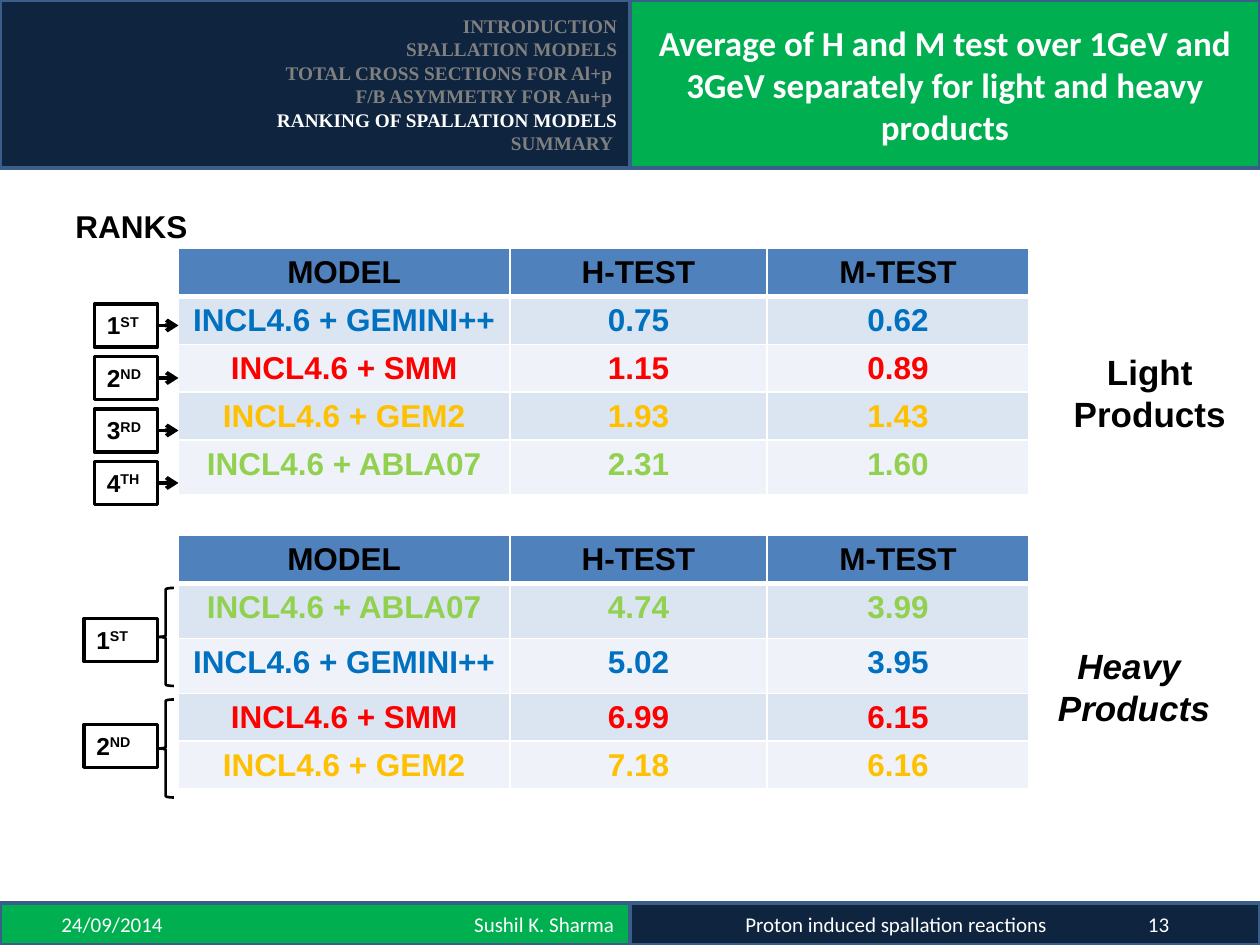
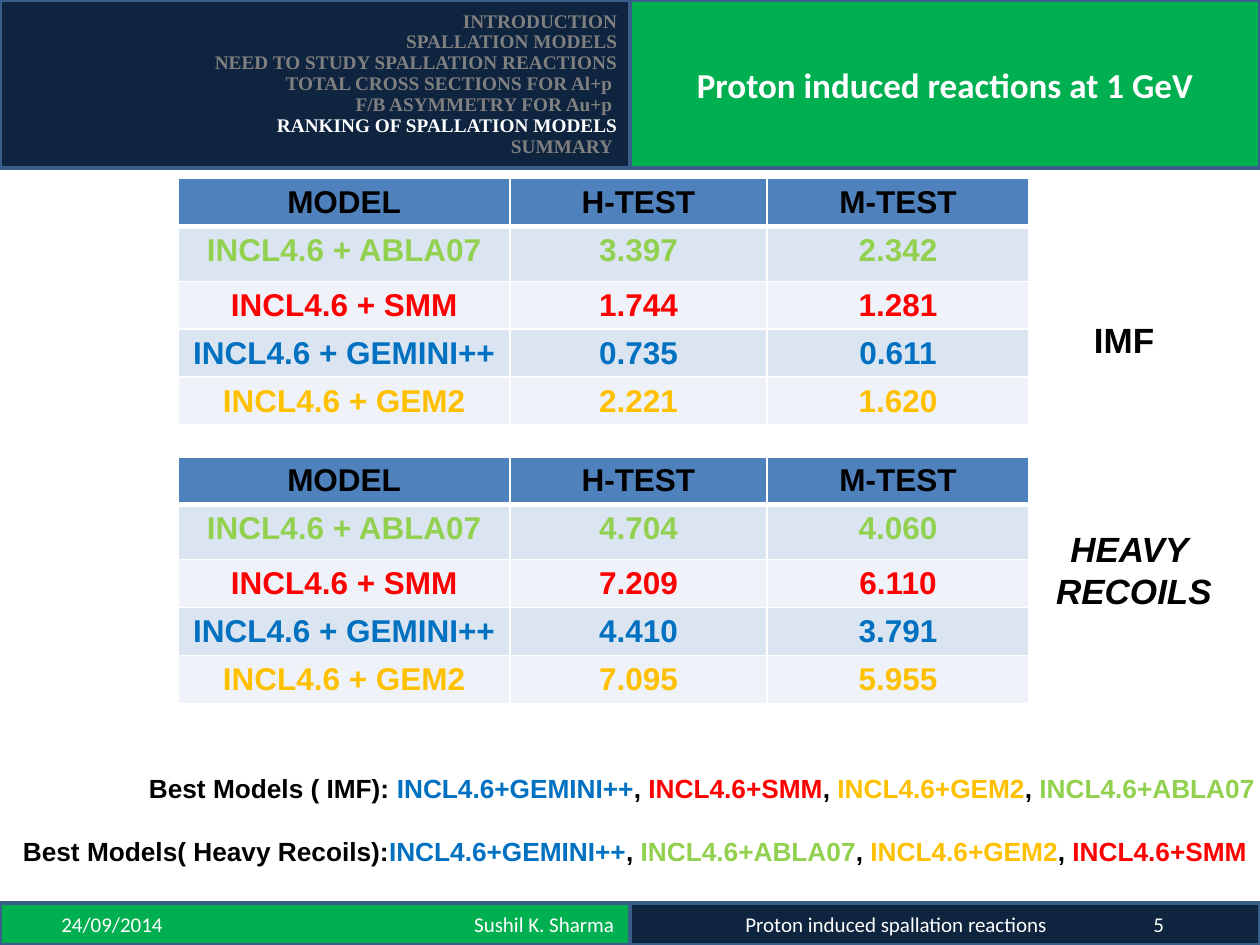
from dataclasses import dataclass

from lxml import etree
from pptx import Presentation
from pptx.dml.color import RGBColor
from pptx.enum.shapes import MSO_CONNECTOR, MSO_SHAPE
from pptx.enum.text import MSO_ANCHOR, MSO_AUTO_SIZE, PP_ALIGN
from pptx.oxml.ns import qn
from pptx.util import Pt

LEFT, CENTER, RIGHT = PP_ALIGN.LEFT, PP_ALIGN.CENTER, PP_ALIGN.RIGHT
MIDDLE, TOP = MSO_ANCHOR.MIDDLE, MSO_ANCHOR.TOP
RECTANGLE, LEFT_BRACE = MSO_SHAPE.RECTANGLE, MSO_SHAPE.LEFT_BRACE
STRAIGHT = MSO_CONNECTOR.STRAIGHT
NO_AUTOFIT = MSO_AUTO_SIZE.NONE
TITLE_AND_CONTENT = 1
RIGHT_SIDE = 3


@dataclass(frozen=True)
class Theme:
    navy: str = "0F243E"
    green: str = "00B050"
    band_line: str = "395E8A"
    muted: str = "808080"
    black: str = "000000"
    white: str = "FFFFFF"
    table_header: str = "4F81BD"
    table_bands: tuple = ("DBE5F1", "EFF3F9")
    body_font: str = "Arial"
    band_font: str = "Calibri"
    outline_font: str = "Times New Roman"
    title_size: float = 20
    label_size: float = 20
    table_size: float = 18
    best_size: float = 15
    rank_size: float = 14
    footer_size: float = 12
    outline_size: float = 11


THEME = Theme()
MODEL_COLORS = {
    "GEMINI++": "0070C0",
    "SMM": "FF0000",
    "GEM2": "FFC000",
    "ABLA07": "92D050",
}
COLUMN_WIDTHS = (189.4, 146.9, 149.8)
ROW_HEIGHT, TALL_ROW_HEIGHT = 27.4, 31.4
TABLE_LEFT = 102
BAND_MIDDLE = 360
HEADER_HEIGHT = 96
FOOTER_TOP, FOOTER_HEIGHT = 516, 24


def points(*lengths):
    return [Pt(length) for length in lengths]


def write(paragraph, text, font=THEME.body_font, size=THEME.table_size,
          color=THEME.black, bold=True, italic=False, align=None, superscript=False):
    run = paragraph.add_run()
    run.text = text
    run.font.name = font
    run.font.size = Pt(size)
    run.font.bold = bold
    run.font.italic = italic
    run.font.color.rgb = RGBColor.from_string(color)
    if align is not None:
        paragraph.alignment = align
    if superscript:
        run._r.get_or_add_rPr().set("baseline", "30000")


def paragraphs_for(frame, count):
    return [frame.paragraphs[0]] + [frame.add_paragraph() for _ in range(count - 1)]


def style_shape(shape, fill, line, width=2):
    if fill is None:
        shape.fill.background()
    else:
        shape.fill.solid()
        shape.fill.fore_color.rgb = RGBColor.from_string(fill)
    shape.line.color.rgb = RGBColor.from_string(line)
    shape.line.width = Pt(width)


def add_shape(slide, kind, box, fill, line, width=2):
    shape = slide.shapes.add_shape(kind, *points(*box))
    shape.shadow.inherit = False
    style_shape(shape, fill, line, width)
    return shape


def set_frame(frame, anchor, margin_right=7.2):
    frame.word_wrap = True
    frame.auto_size = NO_AUTOFIT
    frame.vertical_anchor = anchor
    frame.margin_left, frame.margin_right = points(7.2, margin_right)
    frame.margin_top = frame.margin_bottom = Pt(3.6)


def add_text_box(slide, box, margin_right=7.2):
    frame = slide.shapes.add_textbox(*points(*box)).text_frame
    set_frame(frame, TOP, margin_right)
    return frame


def add_label(slide, box, lines, **text_format):
    frame = add_text_box(slide, box)
    for paragraph, line in zip(paragraphs_for(frame, len(lines)), lines):
        write(paragraph, line, **text_format)


def place_placeholder(shape, box, fill):
    shape.left, shape.top, shape.width, shape.height = points(*box)
    style_shape(shape, fill, THEME.band_line)
    set_frame(shape.text_frame, MIDDLE)
    return shape.text_frame


def fill_header(slide, box, title, sections, current, line_pitch):
    left, top, width, height = box
    half = width / 2
    title_frame = place_placeholder(
        slide.shapes.title, (left + half, top, half, height), THEME.green)
    write(title_frame.paragraphs[0], title, font=THEME.band_font,
          size=THEME.title_size, color=THEME.white, align=CENTER)

    outline = place_placeholder(
        slide.placeholders[1], (left, top, half, height), THEME.navy)
    for paragraph, section in zip(paragraphs_for(outline, len(sections)), sections):
        properties = paragraph._p.get_or_add_pPr()
        properties.set("marL", "0")
        properties.set("indent", "0")
        paragraph.space_before = Pt(0)
        paragraph.line_spacing = Pt(line_pitch)
        etree.SubElement(properties, qn("a:buNone"))
        write(paragraph, section, font=THEME.outline_font, size=THEME.outline_size,
              color=THEME.white if section == current else THEME.muted, align=RIGHT)


def add_footer_band(slide, box, fill, entries):
    band = add_shape(slide, RECTANGLE, box, fill, THEME.band_line)
    set_frame(band.text_frame, MIDDLE)
    paragraph = band.text_frame.paragraphs[0]
    tabs = etree.SubElement(paragraph._p.get_or_add_pPr(), qn("a:tabLst"))
    for text, position, alignment in entries:
        etree.SubElement(tabs, qn("a:tab"), pos=str(Pt(position)), algn=alignment)
    write(paragraph, "".join("\t" + entry[0] for entry in entries),
          font=THEME.band_font, size=THEME.footer_size, color=THEME.white,
          bold=False, align=LEFT)


def add_footer(slide, box, number):
    left, top, width, height = box
    half = width / 2
    add_footer_band(slide, (left, top, half, height), THEME.green,
                    [("24/09/2014", 28, "l"), ("Sushil K. Sharma", 344, "r")])
    add_footer_band(slide, (left + half, top, half, height), THEME.navy,
                    [("Proton induced spallation reactions", 145, "ctr"),
                     (number, 295, "ctr")])


def set_borders(cell, widths):
    properties = cell._tc.get_or_add_tcPr()
    for edge, width in widths.items():
        line = etree.SubElement(properties, qn("a:" + edge), w=str(Pt(width)))
        fill = etree.SubElement(line, qn("a:solidFill"))
        etree.SubElement(fill, qn("a:srgbClr"), val=THEME.white)


def add_ranking_table(slide, left, top, scores, tall_rows):
    rows = [("MODEL", "H-TEST", "M-TEST")]
    rows += [("INCL4.6 + " + model, *values) for model, *values in scores]
    colors = [THEME.black] + [MODEL_COLORS[score[0]] for score in scores]
    heights = [TALL_ROW_HEIGHT if index in tall_rows else ROW_HEIGHT
               for index in range(len(rows))]
    box = (left, top, sum(COLUMN_WIDTHS), sum(heights))
    table = slide.shapes.add_table(
        len(rows), len(COLUMN_WIDTHS), *points(*box)).table
    for column, width in zip(table.columns, COLUMN_WIDTHS):
        column.width = Pt(width)
    for index, (values, color) in enumerate(zip(rows, colors)):
        table.rows[index].height = Pt(heights[index])
        fill = THEME.table_bands[(index - 1) % 2] if index else THEME.table_header
        borders = {"lnL": 1, "lnR": 1, "lnT": 3 if index == 1 else 1,
                   "lnB": 1 if index else 3}
        for cell, value in zip(table.rows[index].cells, values):
            set_borders(cell, borders)
            cell.fill.solid()
            cell.fill.fore_color.rgb = RGBColor.from_string(fill)
            write(cell.text_frame.paragraphs[0], value, color=color, align=CENTER)


def add_rank_box(slide, box, rank):
    shape = add_shape(slide, RECTANGLE, box, THEME.white, THEME.black)
    set_frame(shape.text_frame, TOP, margin_right=0)
    paragraph = shape.text_frame.paragraphs[0]
    write(paragraph, rank[0], size=THEME.rank_size, align=LEFT)
    write(paragraph, rank[1:], size=THEME.rank_size, superscript=True)
    return shape


def add_rank_arrows(slide, box, ranks):
    left, top, width, pitch = box
    arrow_length, box_height = 12, 24.5
    for index, rank in enumerate(ranks):
        rank_top = top + index * pitch
        rank_box = add_rank_box(
            slide, (left, rank_top, width - arrow_length, box_height), rank)
        middle = rank_top + box_height / 2
        arrow = slide.shapes.add_connector(
            STRAIGHT, *points(left + width - arrow_length, middle, left + width, middle))
        arrow.begin_connect(rank_box, RIGHT_SIDE)
        arrow.line.color.rgb = RGBColor.from_string(THEME.black)
        arrow.line.width = Pt(2.25)
        line = arrow.line._get_or_add_ln()
        etree.SubElement(line, qn("a:tailEnd"), type="arrow")
        etree.SubElement(arrow._element.spPr, qn("a:effectLst"))


def add_rank_brace(slide, box, rank, box_offset):
    left, top, width, height = box
    brace_width = 9.4
    box_width = width - brace_width
    add_shape(slide, LEFT_BRACE, (left + box_width, top, brace_width, height),
              None, THEME.black, width=1.5)
    add_rank_box(slide, (left, top + box_offset, box_width, 24.5), rank)


def add_best_models(slide, box, heading, models):
    frame = add_text_box(slide, box, margin_right=0)
    paragraph = frame.paragraphs[0]
    write(paragraph, heading, size=THEME.best_size)
    for index, model in enumerate(models):
        if index:
            write(paragraph, ", ", size=THEME.best_size)
        write(paragraph, "INCL4.6+" + model, size=THEME.best_size,
              color=MODEL_COLORS[model])


def add_framed_slide(presentation, title, sections, line_pitch, number):
    slide = presentation.slides.add_slide(
        presentation.slide_layouts[TITLE_AND_CONTENT])
    fill_header(slide, (0, 0, 2 * BAND_MIDDLE, HEADER_HEIGHT), title, sections,
                "RANKING OF SPALLATION MODELS", line_pitch)
    add_footer(slide, (0, FOOTER_TOP, 2 * BAND_MIDDLE, FOOTER_HEIGHT), number)
    return slide


def build_average_slide(presentation, sections):
    slide = add_framed_slide(
        presentation,
        "Average of H and M test over 1GeV and 3GeV separately for light and heavy products",
        sections, 13.4, "13")
    add_ranking_table(slide, TABLE_LEFT, 142, [
        ("GEMINI++", "0.75", "0.62"), ("SMM", "1.15", "0.89"),
        ("GEM2", "1.93", "1.43"), ("ABLA07", "2.31", "1.60")], {4})
    add_ranking_table(slide, TABLE_LEFT, 306, [
        ("ABLA07", "4.74", "3.99"), ("GEMINI++", "5.02", "3.95"),
        ("SMM", "6.99", "6.15"), ("GEM2", "7.18", "6.16")], {1, 2})
    add_label(slide, (600, 196.5, 114, 55.5), ["Light", "Products"],
              size=THEME.label_size, align=CENTER)
    add_label(slide, (594, 364.5, 108, 55.5), ["Heavy ", "Products"],
              size=THEME.label_size, italic=True, align=CENTER)
    add_label(slide, (36, 115, 96, 29), ["RANKS"])
    add_rank_arrows(slide, (54, 173.75, 48, 30), ["1ST", "2ND", "3RD", "4TH"])
    add_rank_brace(slide, (48, 336, 51.4, 56), "1ST", 17.5)
    add_rank_brace(slide, (48, 399.75, 51.4, 56), "2ND", 14.25)


def build_one_gev_slide(presentation, sections):
    slide = add_framed_slide(
        presentation, "Proton induced reactions at 1 GeV", sections, 11.9, "5")
    add_ranking_table(slide, TABLE_LEFT, 102, [
        ("ABLA07", "3.397", "2.342"), ("SMM", "1.744", "1.281"),
        ("GEMINI++", "0.735", "0.611"), ("GEM2", "2.221", "1.620")], {1})
    add_ranking_table(slide, TABLE_LEFT, 261, [
        ("ABLA07", "4.704", "4.060"), ("SMM", "7.209", "6.110"),
        ("GEMINI++", "4.410", "3.791"), ("GEM2", "7.095", "5.955")], {1})
    add_label(slide, (618, 178.5, 60, 31.5), ["IMF"], size=THEME.label_size)
    add_label(slide, (594, 298, 108, 55.5), ["HEAVY ", "RECOILS"],
              size=THEME.label_size, italic=True, align=CENTER)
    add_best_models(slide, (78, 438, 642, 25), "Best Models ( IMF): ",
                    ["GEMINI++", "SMM", "GEM2", "ABLA07"])
    add_best_models(slide, (6, 474, 714, 25), "Best Models( Heavy Recoils):",
                    ["GEMINI++", "ABLA07", "GEM2", "SMM"])


def main():
    presentation = Presentation()
    presentation.slide_width, presentation.slide_height = points(720, 540)
    opening = ["INTRODUCTION", "SPALLATION MODELS"]
    results = ["TOTAL CROSS SECTIONS FOR Al+p ", "F/B ASYMMETRY FOR Au+p ",
               "RANKING OF SPALLATION MODELS", "SUMMARY "]
    build_average_slide(presentation, opening + results)
    build_one_gev_slide(
        presentation, opening + ["NEED TO STUDY SPALLATION REACTIONS"] + results)
    presentation.save("out.pptx")


if __name__ == "__main__":
    main()
